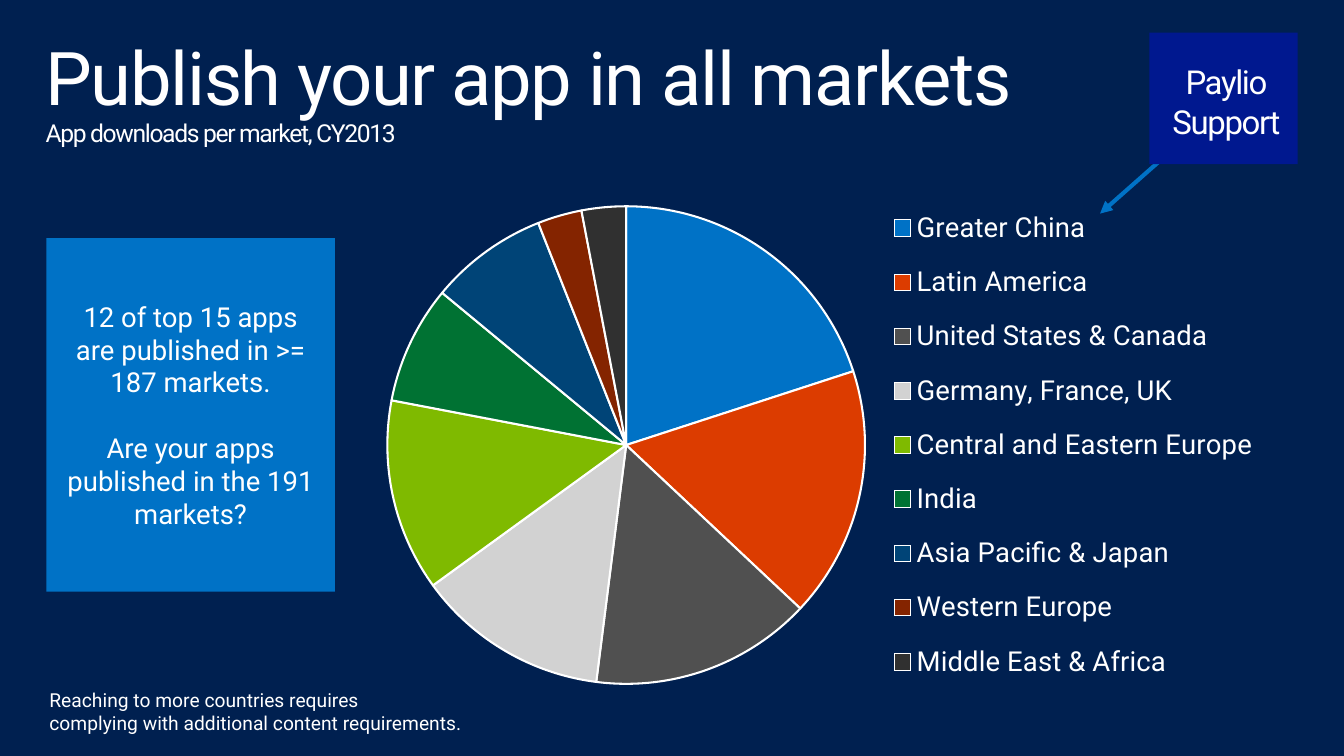
from dataclasses import dataclass

from lxml import etree
from pptx import Presentation, util as u
from pptx.chart.data import CategoryChartData
from pptx.dml.color import RGBColor
from pptx.enum import chart as ch, shapes, text
from pptx.oxml import parse_xml
from pptx.oxml.ns import nsdecls, qn

FONT = "Roboto"
WHITE, NAVY, BLUE, INDIGO = "FFFFFF", "002050", "0072C6", "00188F"


@dataclass
class Market:
    name: str
    share: int
    color: str


@dataclass
class Panel:
    box: tuple  # left, top, width, height in cm
    insets: tuple  # left, top, right, bottom in cm
    fill: str
    paragraphs: list
    size: int
    spacing: int = 0
    gap: int = 0


MARKETS = [
    Market("Greater China", 20, BLUE),
    Market("Latin America", 17, "DC3C00"),
    Market("United States & Canada", 15, "505050"),
    Market("Germany, France, UK", 13, "D2D2D2"),
    Market("Central and Eastern Europe", 13, "7FBA00"),
    Market("India", 8, "007233"),
    Market("Asia Pacific & Japan", 8, "004477"),
    Market("Western Europe", 3, "842400"),
    Market("Middle East & Africa", 3, "303030"),
]

PANELS = [
    Panel((29.54, 0.84, 3.81, 3.38), (0.25, 0.25, 0.1, 0.1), INDIGO,
          ["Paylio\nSupport"], 24, spacing=-100),
    Panel((1.19, 6.12, 7.42, 9.09), (0.51, 0.36, 0.51, 0.36), BLUE,
          ["12 of top 15 apps are published in >= 187 markets.",
           "Are your apps published in the 191 markets?"], 20, gap=24),
]


def cm(values) -> list:
    return [u.Cm(v) for v in values]


def paint(fmt, color: str) -> None:
    """Fill a shape, chart point or background with a solid colour."""
    fmt.fill.solid()
    fmt.fill.fore_color.rgb = RGBColor.from_string(color)


def style_font(font, size: int, color: str = WHITE) -> None:
    font.name, font.size = FONT, u.Pt(size)
    font.color.rgb = RGBColor.from_string(color)


def write(p, words: str, *, size: int, spacing: int = 0) -> None:
    for i, line in enumerate(words.split("\n")):
        if i:
            p.add_line_break()
        r = p.add_run()
        r.text = line
        style_font(r.font, size)
        if spacing:
            r._r.get_or_add_rPr().set("spc", str(spacing))


def set_frame(tf, insets: tuple, anchor) -> None:
    tf.word_wrap = True
    tf.vertical_anchor = anchor
    (tf.margin_left, tf.margin_top,
     tf.margin_right, tf.margin_bottom) = cm(insets)


def add_title(s) -> None:
    sp = s.shapes.title
    sp.left, sp.top, sp.width, sp.height = cm((0.76, 0.81, 33.02, 2.54))
    tf = sp.text_frame
    set_frame(tf, (0.41, 0.25, 0.41, 0.25), text.MSO_ANCHOR.TOP)
    tf.auto_size = text.MSO_AUTO_SIZE.NONE
    p = tf.paragraphs[0]
    p.alignment, p.line_spacing = text.PP_ALIGN.LEFT, 0.9
    write(p, "Publish your app in all markets", size=54, spacing=-100)
    p.add_line_break()
    write(p, "App downloads per market, CY2013", size=18, spacing=-100)


def set_layout(part, x: float, y: float, w: float, h: float, inner: bool = False) -> None:
    """Place the plot area or legend by fractions of the chart."""
    for old in part.findall(qn("c:layout")):
        part.remove(old)
    target = '<c:layoutTarget val="inner"/>' if inner else ""
    layout = parse_xml(
        f'<c:layout {nsdecls("c")}><c:manualLayout>{target}'
        '<c:xMode val="edge"/><c:yMode val="edge"/>'
        f'<c:x val="{x}"/><c:y val="{y}"/><c:w val="{w}"/><c:h val="{h}"/>'
        '</c:manualLayout></c:layout>')
    before = part.find(qn("c:legendPos"))
    part.insert(0 if before is None else part.index(before) + 1, layout)


def add_pie(s) -> None:
    data = CategoryChartData()
    data.categories = [m.name for m in MARKETS]
    data.add_series("Series 1", [m.share for m in MARKETS])
    chart = s.shapes.add_chart(ch.XL_CHART_TYPE.PIE,
                               *cm((9.22, 4.62, 23.7, 13.64)), data).chart
    chart.has_title = False
    style_font(chart.font, 10)
    plot = chart.plots[0]
    plot.vary_by_categories = True
    for i, market in enumerate(MARKETS):
        fmt = plot.series[0].points[i].format
        paint(fmt, market.color)
        fmt.line.color.rgb = RGBColor.from_string(WHITE)
        fmt.line.width = u.Pt(1.5)
    chart.has_legend = True
    legend = chart.legend
    legend.position = ch.XL_LEGEND_POSITION.RIGHT
    legend.include_in_layout = False
    style_font(legend.font, 20)
    set_layout(legend._element, 0.57, 0.02, 0.41, 0.96)
    set_layout(chart._chartSpace.chart.plotArea, 0.03, 0.05, 0.52, 0.9, inner=True)


def add_arrow(s) -> None:
    line = s.shapes.add_connector(shapes.MSO_CONNECTOR.STRAIGHT,
                                  *cm((29.97, 3.99, 28.27, 5.49)))
    line.line.color.rgb = RGBColor.from_string(BLUE)
    line.line.width = u.Pt(3)
    etree.SubElement(line.line._get_or_add_ln(), qn("a:tailEnd"), type="triangle")
    etree.SubElement(line._element.spPr, qn("a:effectLst"))


def add_panel(s, panel: Panel) -> None:
    sp = s.shapes.add_shape(shapes.MSO_SHAPE.RECTANGLE, *cm(panel.box))
    sp.shadow.inherit = False
    paint(sp, panel.fill)
    sp.line.fill.background()
    tf = sp.text_frame
    set_frame(tf, panel.insets, text.MSO_ANCHOR.MIDDLE)
    for i, words in enumerate(panel.paragraphs):
        p = tf.add_paragraph() if i else tf.paragraphs[0]
        p.alignment = text.PP_ALIGN.CENTER
        if i:
            p.space_before = u.Pt(panel.gap)
        write(p, words, size=panel.size, spacing=panel.spacing)


def add_note(s) -> None:
    # Wide enough to keep the note on two lines, clear of the slide's edge
    tf = s.shapes.add_textbox(*cm((1.02, 17.55, 12, 1.45))).text_frame
    set_frame(tf, (0.25, 0.13, 0.25, 0.13), text.MSO_ANCHOR.TOP)
    tf.auto_size = text.MSO_AUTO_SIZE.SHAPE_TO_FIT_TEXT
    write(tf.paragraphs[0], "Reaching to more countries requires\n"
          "complying with additional content requirements.", size=14)


def main() -> None:
    prs = Presentation()
    prs.slide_width, prs.slide_height = cm((34.54, 19.43))
    s = prs.slides.add_slide(prs.slide_layouts[5])
    paint(s.background, NAVY)

    # Heading and chart
    add_title(s)
    add_pie(s)

    # Callouts; the arrow starts behind its panel
    add_arrow(s)
    for panel in PANELS:
        add_panel(s, panel)

    # Footnote
    add_note(s)
    prs.save("out.pptx")


if __name__ == "__main__":
    main()
